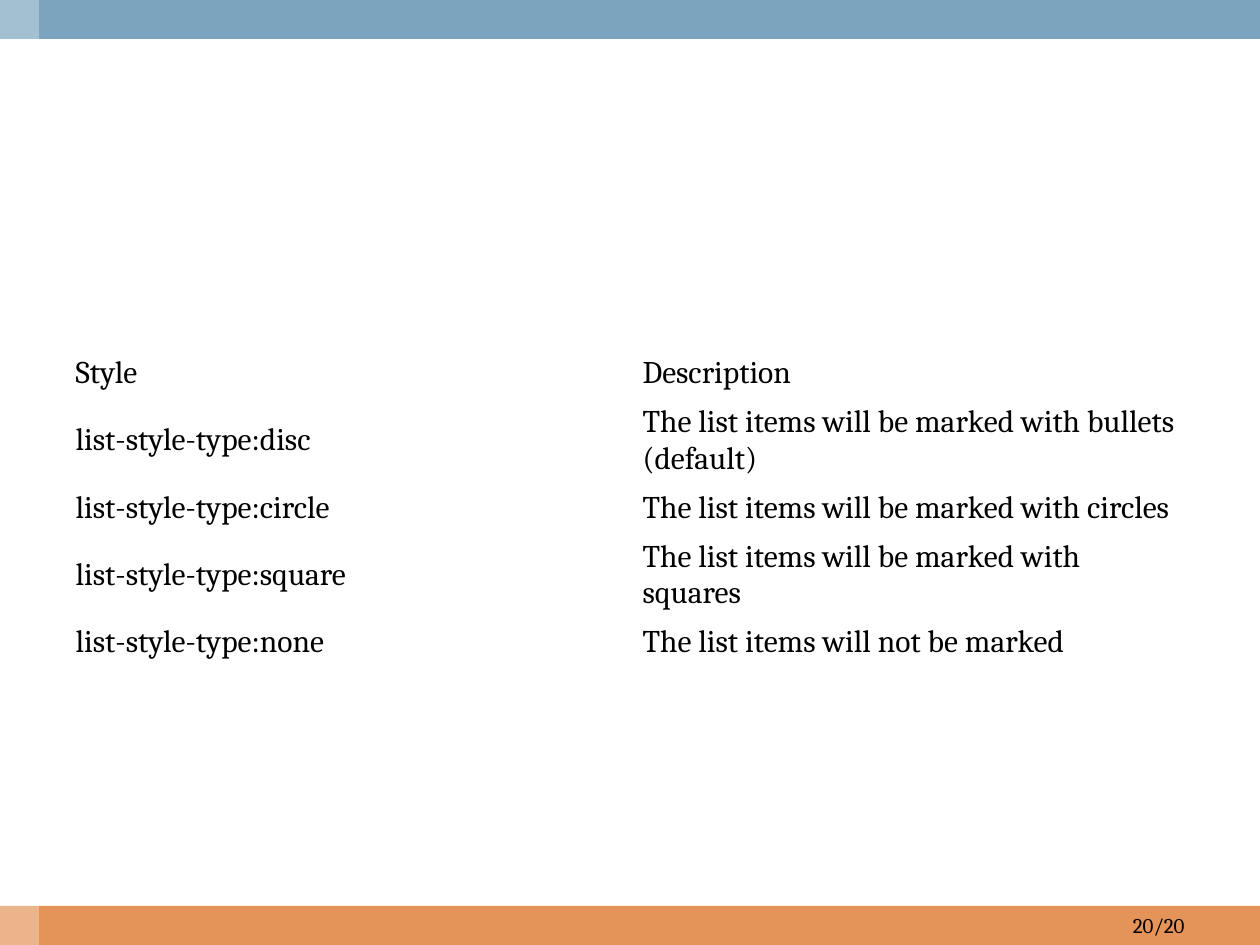
"""Build a slide with a table of list styles between two colour bars."""
from dataclasses import dataclass

from lxml.etree import SubElement
from pptx import Presentation
from pptx.dml.color import RGBColor
from pptx.enum.shapes import MSO_SHAPE
from pptx.enum.text import MSO_ANCHOR, PP_ALIGN
from pptx.oxml.ns import qn
from pptx.slide import Slide
from pptx.text.text import TextFrame
from pptx.util import Emu, Pt

SCALE = 914400 / 126
WIDE, HIGH, BAR = 1260, 945, 39


@dataclass(frozen=True)
class Theme:
    font: str = "Cambria"
    ink: str = "000000"
    top: str = "7BA5BE"
    foot: str = "E49458"
    veil: str = "FFFFFF"
    body: int = 18
    small: int = 12


@dataclass(frozen=True)
class Box:
    left: int
    top: int
    width: int
    height: int

    def emu(self) -> tuple[Emu, ...]:
        return tuple(map(px, (self.left, self.top, self.width, self.height)))


@dataclass(frozen=True)
class Band:
    box: Box
    color: str
    alpha: int = 100


THEME = Theme()
BANDS = (
    Band(Box(0, HIGH - BAR, WIDE, BAR), THEME.foot),
    Band(Box(0, 0, WIDE, BAR), THEME.top),
    Band(Box(0, 0, BAR, HIGH), THEME.veil, 30),
)
GRID = Box(63, 349, 1134, 365)
PAGE = Box(903, HIGH - BAR, 294, BAR)
ROWS = (
    ("Style", "Description"),
    ("list-style-type:disc", "The list items will be marked with bullets (default)"),
    ("list-style-type:circle", "The list items will be marked with circles"),
    ("list-style-type:square", "The list items will be marked with squares"),
    ("list-style-type:none", "The list items will not be marked"),
)


def px(count: int) -> Emu:
    return Emu(round(count * SCALE))


def write(frame: TextFrame, text: str, size: int) -> None:
    frame.text = text
    for run in frame.paragraphs[0].runs:
        run.font.name = THEME.font
        run.font.size = Pt(size)
        run.font.bold = False
        run.font.color.rgb = RGBColor.from_string(THEME.ink)


def draw_band(slide: Slide, band: Band) -> None:
    shape = slide.shapes.add_shape(MSO_SHAPE.RECTANGLE, *band.box.emu())
    shape.shadow.inherit = False
    shape.line.fill.background()
    shape.fill.solid()
    shape.fill.fore_color.rgb = RGBColor.from_string(band.color)
    if band.alpha < 100:
        color = shape.fill._xPr.find(".//" + qn("a:srgbClr"))
        SubElement(color, qn("a:alpha")).set("val", str(band.alpha * 1000))


def draw_table(slide: Slide, box: Box, rows: tuple[tuple[str, ...], ...]) -> None:
    frame = slide.shapes.add_table(len(rows), len(rows[0]), *box.emu())
    table = frame.table
    table.first_row = table.horz_banding = False
    for row, texts in zip(table.rows, rows):
        row.height = Emu(0)
        for cell, text in zip(row.cells, texts):
            cell.fill.background()
            cell.vertical_anchor = MSO_ANCHOR.MIDDLE
            write(cell.text_frame, text, THEME.body)
    frame.height = px(box.height)


def draw_page(slide: Slide, box: Box, text: str) -> None:
    frame = slide.shapes.add_textbox(*box.emu()).text_frame
    frame.word_wrap = True
    frame.vertical_anchor = MSO_ANCHOR.MIDDLE
    write(frame, text, THEME.small)
    frame.paragraphs[0].alignment = PP_ALIGN.RIGHT


def main() -> None:
    deck = Presentation()
    deck.slide_width, deck.slide_height = px(WIDE), px(HIGH)
    slide = deck.slides.add_slide(deck.slide_layouts[6])
    for band in BANDS:
        draw_band(slide, band)
    draw_table(slide, GRID, ROWS)
    draw_page(slide, PAGE, "20/20")
    deck.save("out.pptx")


if __name__ == "__main__":
    main()
